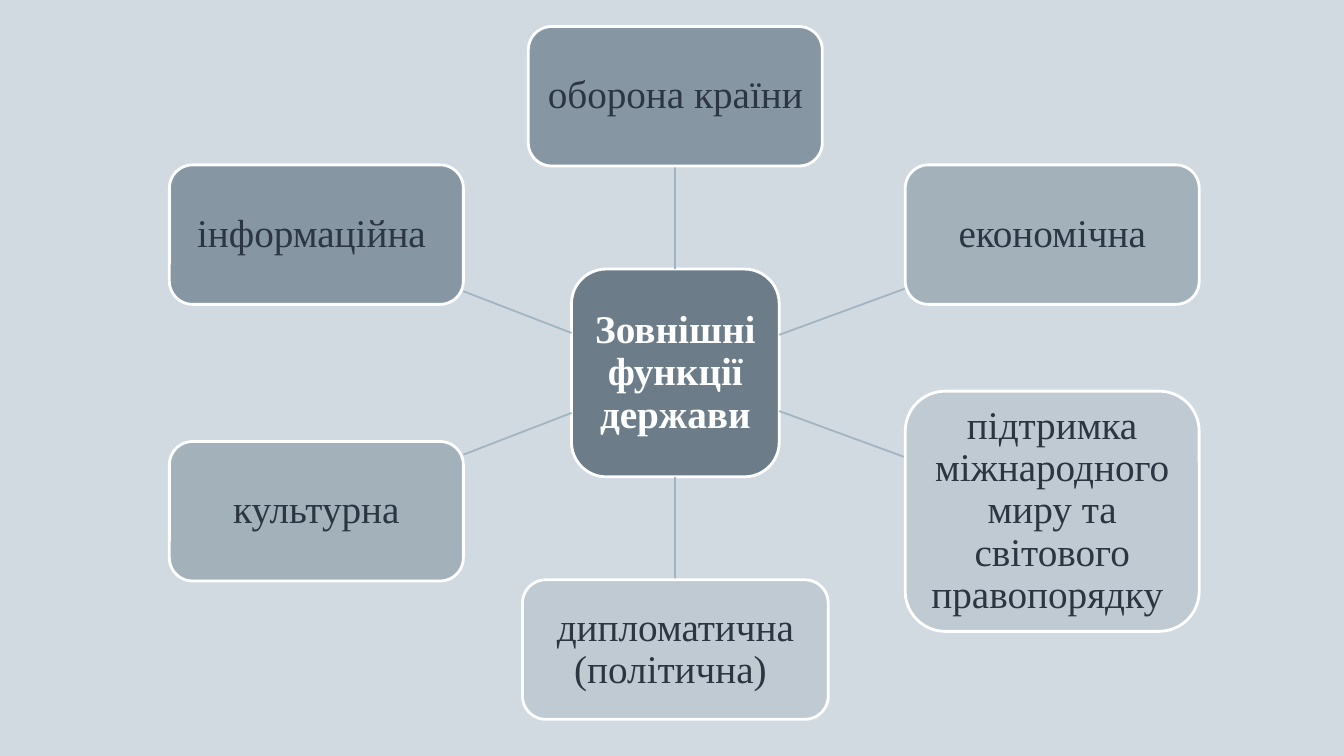
from dataclasses import dataclass

from lxml import etree
from pptx import Presentation
from pptx.dml.color import RGBColor
from pptx.enum.shapes import MSO_CONNECTOR, MSO_SHAPE
from pptx.enum.text import MSO_ANCHOR, PP_ALIGN
from pptx.oxml.ns import qn
from pptx.util import Pt

ROUND_RECT = MSO_SHAPE.ROUNDED_RECTANGLE
STRAIGHT = MSO_CONNECTOR.STRAIGHT
MIDDLE = MSO_ANCHOR.MIDDLE
CENTER = PP_ALIGN.CENTER


@dataclass(frozen=True)
class Theme:
    background: str = "D1D9E1"
    hub: str = "6C7D89"
    dark: str = "8697A3"
    medium: str = "A3B1BB"
    light: str = "C0CAD2"
    ink: str = "2B3642"
    white: str = "FFFFFF"
    spoke: str = "A1B4C2"
    font: str = "Times New Roman"
    size: float = 28
    border: float = 2
    spoke_width: float = 1.25
    inset: float = 5.6


THEME = Theme()

SLIDE_W, SLIDE_H = 960, 540
HUB_CENTER = (482.4, 266.4)
HUB_SIDE = 148.4
NODE_W, NODE_H = 210, 99.6
RISE = 98.8  # vertical step between neighbouring nodes
LEFT, RIGHT = -256.4, 269.2

# Text, offset from the hub centre, size, fill
FUNCTIONS = [
    ("оборона країни ", 0, -2 * RISE, NODE_W, NODE_H, THEME.dark),
    ("економічна", RIGHT, -RISE, NODE_W, NODE_H, THEME.medium),
    ("підтримка міжнародного миру та світового правопорядку ",
     RIGHT, RISE, NODE_W, 171.6, THEME.light),
    ("дипломатична (політична) ", 0, 2 * RISE, 218.4, NODE_H, THEME.light),
    ("культурна", LEFT, RISE, NODE_W, NODE_H, THEME.medium),
    ("інформаційна ", LEFT, -RISE, NODE_W, NODE_H, THEME.dark),
]


def rgb(value):
    return RGBColor.from_string(value)


def write_text(sp, text, *, color=THEME.ink, bold=False):
    tf = sp.text_frame
    tf.word_wrap = True
    tf.vertical_anchor = MIDDLE
    tf.margin_left = tf.margin_right = Pt(THEME.inset)
    tf.margin_top = tf.margin_bottom = Pt(THEME.inset)
    p = tf.paragraphs[0]
    p.alignment = CENTER
    p.line_spacing = 0.9
    r = p.add_run()
    r.text = text
    r.font.name = THEME.font
    r.font.size = Pt(THEME.size)
    r.font.bold = bold
    r.font.color.rgb = rgb(color)


def add_node(s, text, cx, cy, w, h, fill, **text_format):
    """Rounded box centred on (cx, cy)."""
    sp = s.shapes.add_shape(ROUND_RECT, Pt(cx - w / 2), Pt(cy - h / 2), Pt(w), Pt(h))
    sp.shadow.inherit = False
    sp.fill.solid()
    sp.fill.fore_color.rgb = rgb(fill)
    sp.line.color.rgb = rgb(THEME.white)
    sp.line.width = Pt(THEME.border)
    write_text(sp, text, **text_format)


def edge_share(dx, dy, w, h):
    """Share of the vector (dx, dy) that lies inside a w by h box at its start."""
    return min(side / 2 / abs(d) for side, d in ((w, dx), (h, dy)) if d)


def add_spoke(s, cx, cy, dx, dy, w, h):
    """Line from the hub's edge to the edge of the node."""
    start = edge_share(dx, dy, HUB_SIDE, HUB_SIDE)
    end = 1 - edge_share(dx, dy, w, h)
    line = s.shapes.add_connector(
        STRAIGHT, Pt(cx + dx * start), Pt(cy + dy * start),
        Pt(cx + dx * end), Pt(cy + dy * end))
    line.line.color.rgb = rgb(THEME.spoke)
    line.line.width = Pt(THEME.spoke_width)
    etree.SubElement(line._element.spPr, qn("a:effectLst"))


def add_radial_diagram(s, cx, cy):
    # Hub
    add_node(s, "Зовнішні функції держави", cx, cy, HUB_SIDE, HUB_SIDE,
             THEME.hub, color=THEME.white, bold=True)
    # Spokes and outer nodes
    for text, dx, dy, w, h, fill in FUNCTIONS:
        add_spoke(s, cx, cy, dx, dy, w, h)
        add_node(s, text, cx + dx, cy + dy, w, h, fill)


def main():
    prs = Presentation()
    prs.slide_width, prs.slide_height = Pt(SLIDE_W), Pt(SLIDE_H)
    s = prs.slides.add_slide(prs.slide_layouts.get_by_name("Blank"))
    s.background.fill.solid()
    s.background.fill.fore_color.rgb = rgb(THEME.background)
    add_radial_diagram(s, *HUB_CENTER)
    prs.save("out.pptx")


if __name__ == "__main__":
    main()
